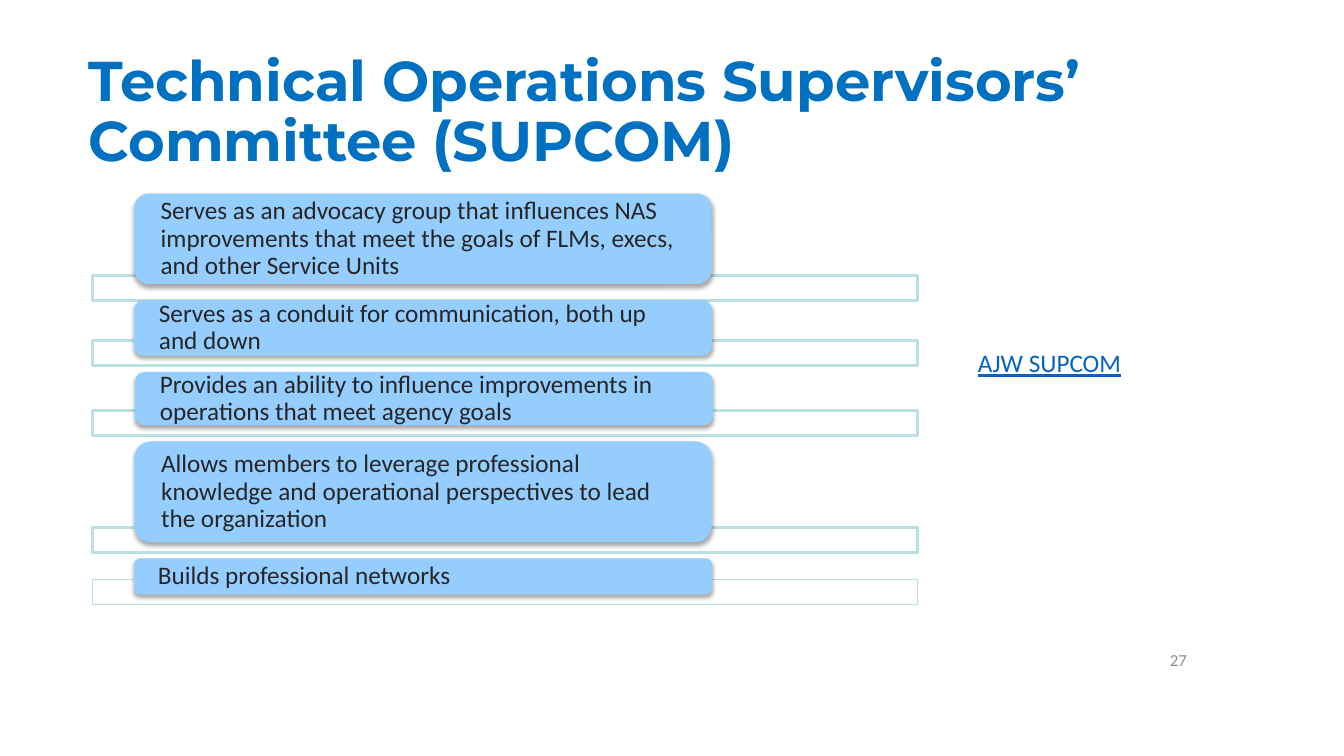
from lxml import etree
from pptx import Presentation
from pptx import util as u
from pptx.dml.color import RGBColor
from pptx.enum import shapes, text
from pptx.oxml.ns import qn

TITLE = "Technical Operations Supervisors’ Committee (SUPCOM)"
LINK = "AJW SUPCOM"
PAGE = "27"
# wording, left, height, overlap with the bar below, bar line width
ROLES = [
    ("Serves as an advocacy group that influences NAS improvements that meet "
     "the goals of FLMs, execs, and other Service Units", 1.33, 0.9, 0.09, 2),
    ("Serves as a conduit for communication, both up and down",
     1.33, 0.55, 0.15, 2),
    ("Provides an ability to influence improvements in operations that meet "
     "agency goals", 1.34, 0.53, 0.15, 2),
    ("Allows members to leverage professional knowledge and operational "
     "perspectives to lead the organization", 1.33, 1, 0.15, 2),
    ("Builds professional networks", 1.33, 0.36, 0.15, 1),
]
FIRST_TOP, GAP, ROLE_W = 1.92, 0.16, 5.73
BAR_LEFT, BAR_W, BAR_H = 0.92, 8.18, 0.25


def color(value):
    return RGBColor.from_string(value)


def add_panel(s, kind, box, fill, line=None, width=0):
    sp = s.shapes.add_shape(kind, *map(u.Inches, box))
    sp.shadow.inherit = False
    sp.fill.solid()
    sp.fill.fore_color.rgb = color(fill)
    if line:
        sp.line.color.rgb = color(line)
        sp.line.width = u.Pt(width)
    else:
        sp.line.fill.background()
    return sp


def set_alpha(parent, percent):
    clr = parent.find(".//" + qn("a:srgbClr"))
    etree.SubElement(clr, qn("a:alpha"), val=str(percent * 1000))


def drop_shadow(sp):
    effects = sp._element.spPr.find(qn("a:effectLst"))
    shadow = etree.SubElement(
        effects, qn("a:outerShdw"), blurRad=str(u.Pt(3.1)),
        dist=str(u.Pt(1.8)), dir="5400000", algn="ctr", rotWithShape="0")
    etree.SubElement(shadow, qn("a:srgbClr"), val="000000")
    set_alpha(effects, 35)


def write(sp, words, size, ink, name="Calibri", anchor="MIDDLE", align="LEFT",
          spacing=None):
    tf = sp.text_frame
    tf.word_wrap = True
    tf.vertical_anchor = text.MSO_ANCHOR[anchor]
    p = tf.paragraphs[0]
    p.alignment = text.PP_ALIGN[align]
    if spacing:
        p.line_spacing = spacing
    r = p.add_run()
    r.text = words
    r.font.size = u.Pt(size)
    r.font.name = name
    r.font.color.rgb = color(ink)
    return r


def add_role(s, top, words, left, height, overlap, width):
    bar = add_panel(s, shapes.MSO_SHAPE.RECTANGLE,
                    (BAR_LEFT, top + height - overlap, BAR_W, BAR_H),
                    "FFFFFF", "BBE0E3", width)
    set_alpha(bar._element.spPr.find(qn("a:solidFill")), 90)
    role = add_panel(s, shapes.MSO_SHAPE.ROUNDED_RECTANGLE,
                     (left, top, ROLE_W, height), "96CDFF")
    drop_shadow(role)
    tf = role.text_frame
    tf.margin_left = tf.margin_right = u.Inches(0.22)
    tf.margin_top = tf.margin_bottom = 0
    write(role, words, 18, "262626", spacing=0.9)


def add_text(s, box, *args, **style):
    return write(s.shapes.add_textbox(*map(u.Inches, box)), *args, **style)


def main():
    prs = Presentation()
    prs.slide_width, prs.slide_height = u.Inches(13.33), u.Inches(7.5)
    s = prs.slides.add_slide(prs.slide_layouts[6])

    top = FIRST_TOP
    for words, left, height, overlap, width in ROLES:
        add_role(s, top, words, left, height, overlap, width)
        top += height + GAP

    title = add_text(s, (0.78, 0.4, 12.42, 1.45), TITLE, 40, "0070C0",
                     name="Montserrat", spacing=0.9)
    title.font.bold = True
    link = add_text(s, (9.6, 3.4, 1.65, 0.4), LINK, 18, "0563C1", anchor="TOP")
    link.font.underline = True
    add_text(s, (9.42, 6.35, 2.45, 0.4), PAGE, 12, "8C8C8C", align="RIGHT")
    prs.save("out.pptx")


if __name__ == "__main__":
    main()
